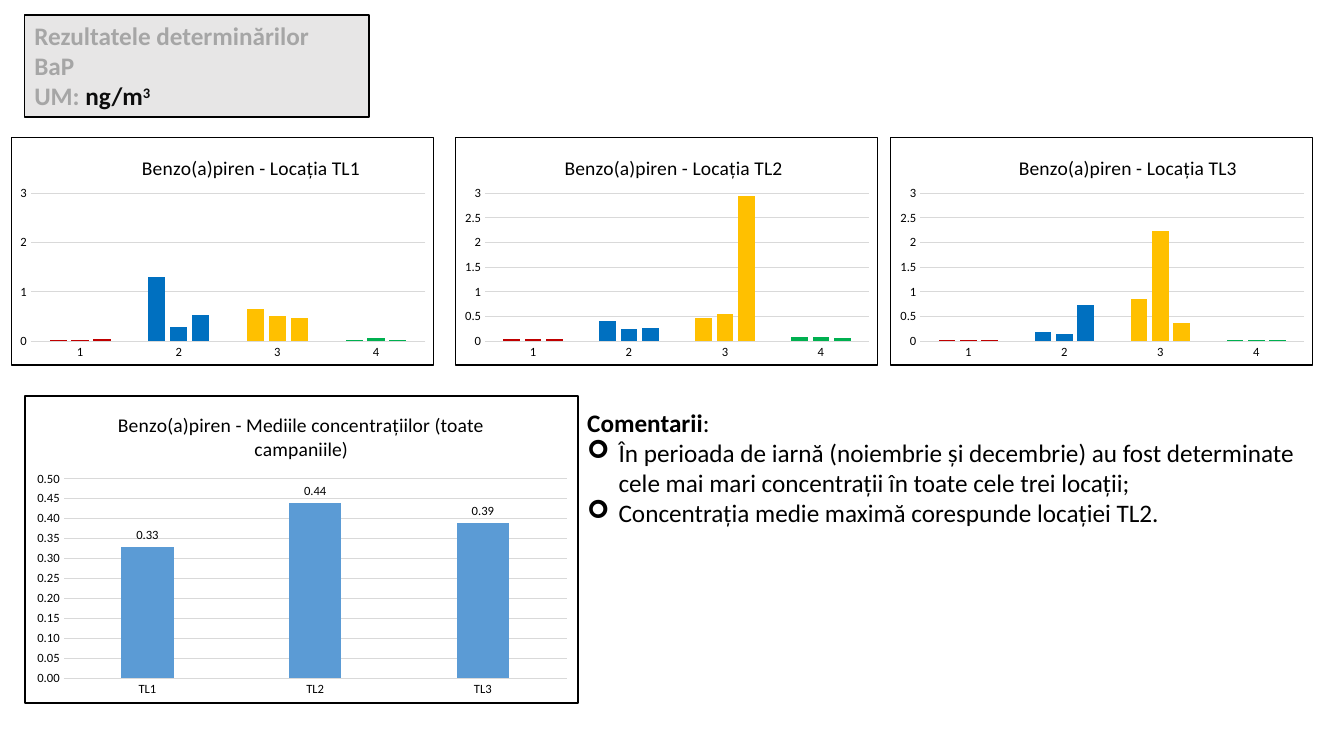
import pptx
import pptx.chart.data
import pptx.dml.color
import pptx.enum.chart
import pptx.enum.text
import pptx.oxml
import pptx.oxml.ns
import pptx.util
from dataclasses import dataclass

Cm = pptx.util.Cm
Pt = pptx.util.Pt
qn = pptx.oxml.ns.qn


@dataclass(frozen=True)
class Theme:
    font: str = "Calibri"
    black: str = "000000"
    panel: str = "E7E6E6"
    muted: str = "A6A6A6"
    unit: str = "0D0D0D"
    grid: str = "D9D9D9"
    bar: str = "5B9BD5"
    campaigns: tuple = ("C00000", "0070C0", "FFC000", "00B050")
    body_size: int = 18
    title_size: int = 14
    axis_size: int = 9


THEME = Theme()

# Location, number format, axis step, title left, plot left and width, series
LOCATIONS = [
    ("TL1", "0", 1, 0.3, 0.045, 0.935,
     [(0.02, 1.31, 0.66, 0.03), (0.03, 0.28, 0.5, 0.07), (0.04, 0.52, 0.46, 0.03)]),
    ("TL2", "General", 0.5, 0.25, 0.07, 0.91,
     [(0.04, 0.41, 0.47, 0.08), (0.05, 0.25, 0.56, 0.08), (0.04, 0.27, 2.95, 0.06)]),
    ("TL3", "General", 0.5, 0.295, 0.07, 0.91,
     [(0.03, 0.18, 0.86, 0.02), (0.03, 0.14, 2.23, 0.02), (0.03, 0.74, 0.37, 0.03)]),
]


def rgb(color):
    return pptx.dml.color.RGBColor.from_string(color)


def style_font(font, size, color=THEME.black, bold=False):
    font.name = THEME.font
    font.size = Pt(size)
    font.bold = bold
    font.color.rgb = rgb(color)


def add_span(para, text, color=THEME.black, bold=False):
    span = para.add_run()
    span.text = text
    style_font(span.font, THEME.body_size, color, bold)
    return span


def set_layout(parent, index, **places):
    """Place a chart part by fractions of the chart area."""
    for old in parent.findall(qn("c:layout")):
        parent.remove(old)
    target = '<c:layoutTarget val="inner"/>' if "w" in places else ""
    modes = '<c:xMode val="edge"/><c:yMode val="edge"/>'
    values = "".join(f'<c:{key} val="{value}"/>' for key, value in places.items())
    parent.insert(index, pptx.oxml.parse_xml(
        f'<c:layout {pptx.oxml.ns.nsdecls("c")}><c:manualLayout>'
        f'{target}{modes}{values}</c:manualLayout></c:layout>'))


def add_heading(page, box):
    title = page.shapes.title
    title.left, title.top, title.width, title.height = box
    title.fill.solid()
    title.fill.fore_color.rgb = rgb(THEME.panel)
    title.line.color.rgb = rgb(THEME.black)
    title.line.width = Pt(1)
    frame = title.text_frame
    frame.word_wrap = True
    frame.auto_size = pptx.enum.text.MSO_AUTO_SIZE.NONE
    frame.vertical_anchor = pptx.enum.text.MSO_ANCHOR.TOP
    lines = [
        [("Rezultatele determinărilor", THEME.muted)],
        [("BaP", THEME.muted)],
        [("UM: ", THEME.muted), ("ng/m", THEME.unit), ("3", THEME.unit)],
    ]
    for number, line in enumerate(lines):
        para = frame.add_paragraph() if number else frame.paragraphs[0]
        para.alignment = pptx.enum.text.PP_ALIGN.LEFT
        para.line_spacing = 1.0
        para.space_before = Pt(0)
        spans = [add_span(para, text, color, True) for text, color in line]
    # The exponent of the unit
    spans[-1].font._element.set("baseline", "30000")


def add_comments(page, box):
    frame = page.shapes.add_textbox(*box).text_frame
    frame.word_wrap = True
    para = frame.paragraphs[0]
    add_span(para, "Comentarii", bold=True)
    add_span(para, ":")
    for text in (
        "În perioada de iarnă (noiembrie și decembrie) au fost determinate "
        "cele mai mari concentrații în toate cele trei locații;",
        "Concentrația medie maximă corespunde locației TL2.",
    ):
        para = frame.add_paragraph()
        props = para._p.get_or_add_pPr()
        props.set("marL", str(Cm(0.79)))
        props.set("indent", str(-Cm(0.79)))
        for bullet in ('buFont {} typeface="Wingdings"', 'buChar {} char="➢"'):
            props.append(pptx.oxml.parse_xml(
                f'<a:{bullet.format(pptx.oxml.ns.nsdecls("a"))}/>'))
        add_span(para, text)


def add_column_chart(page, box, title, categories, series, number_format, step, plot_box):
    data = pptx.chart.data.CategoryChartData()
    data.categories = categories
    for number, values in enumerate(series, 1):
        data.add_series(f"Series {number}", values)
    chart = page.shapes.add_chart(
        pptx.enum.chart.XL_CHART_TYPE.COLUMN_CLUSTERED, *box, data).chart
    style_font(chart.font, 10)
    chart.has_legend = False

    # White ground with a black border
    chart._chartSpace.find(qn("c:chart")).addnext(pptx.oxml.parse_xml(
        f'<c:spPr {pptx.oxml.ns.nsdecls("c", "a")}>'
        '<a:solidFill><a:srgbClr val="FFFFFF"/></a:solidFill>'
        f'<a:ln w="12700"><a:solidFill><a:srgbClr val="{THEME.black}"/></a:solidFill></a:ln>'
        '</c:spPr>'))

    # Title and plot area
    chart.has_title = True
    para = chart.chart_title.text_frame.paragraphs[0]
    para.text = title
    style_font(para.runs[0].font, THEME.title_size)
    left, top, width, height = plot_box
    area = chart._chartSpace.find(qn("c:chart")).find(qn("c:plotArea"))
    set_layout(area, 0, x=left, y=top, w=width, h=height)

    # Axes
    for axis in (chart.category_axis, chart.value_axis):
        axis.major_tick_mark = pptx.enum.chart.XL_TICK_MARK.NONE
        axis.minor_tick_mark = pptx.enum.chart.XL_TICK_MARK.NONE
        style_font(axis.tick_labels.font, THEME.axis_size)
    values_axis = chart.value_axis
    values_axis.minimum_scale = 0
    values_axis.major_unit = step
    values_axis.tick_labels.number_format = number_format
    values_axis.tick_labels.number_format_is_linked = False
    values_axis.has_major_gridlines = True
    values_axis.format.line.fill.background()
    for line in (chart.category_axis.format.line, values_axis.major_gridlines.format.line):
        line.color.rgb = rgb(THEME.grid)
        line.width = Pt(0.75)

    # Columns
    plot = chart.plots[0]
    plot.gap_width = 219
    plot.overlap = -27
    plot.vary_by_categories = False
    for columns in plot.series:
        columns.format.fill.solid()
        columns.format.fill.fore_color.rgb = rgb(THEME.bar)
    return chart


def add_location_chart(page, box, location):
    name, number_format, step, title_left, plot_left, plot_width, series = location
    chart = add_column_chart(
        page, box, f"Benzo(a)piren - Locația {name}", ["1", "2", "3", "4"], series,
        number_format, step, (plot_left, 0.245, plot_width, 0.65))
    chart.value_axis.maximum_scale = 3
    set_layout(chart.chart_title._element, 1, x=title_left, y=0.06)
    for columns in chart.plots[0].series:
        for number, color in enumerate(THEME.campaigns):
            fill = columns.points[number].format.fill
            fill.solid()
            fill.fore_color.rgb = rgb(color)


def add_mean_chart(page, box):
    chart = add_column_chart(
        page, box, "Benzo(a)piren - Mediile concentrațiilor (toate campaniile)",
        ["TL1", "TL2", "TL3"], [(0.33, 0.44, 0.39)], "0.00", 0.05,
        (0.07, 0.27, 0.91, 0.65))
    chart.value_axis.maximum_scale = 0.5
    labels = chart.plots[0].series[0].data_labels
    labels.show_value = True
    labels.number_format = "0.00"
    labels.number_format_is_linked = False
    labels.position = pptx.enum.chart.XL_LABEL_POSITION.OUTSIDE_END
    style_font(labels.font, THEME.axis_size)


def main():
    deck = pptx.Presentation()
    deck.slide_width, deck.slide_height = Cm(33.87), Cm(19.05)
    page = deck.slides.add_slide(deck.slide_layouts.get_by_name("Title Only"))
    add_heading(page, (Cm(0.61), Cm(0.38), Cm(8.69), Cm(2.57)))
    add_comments(page, (Cm(14.55), Cm(10.13), Cm(18.67), Cm(3.33)))
    for left, location in zip((0.28, 11.46, 22.43), LOCATIONS):
        add_location_chart(page, (Cm(left), Cm(3.45), Cm(10.67), Cm(5.77)), location)
    add_mean_chart(page, (Cm(0.61), Cm(9.96), Cm(13.97), Cm(7.77)))
    deck.save("out.pptx")


if __name__ == "__main__":
    main()
